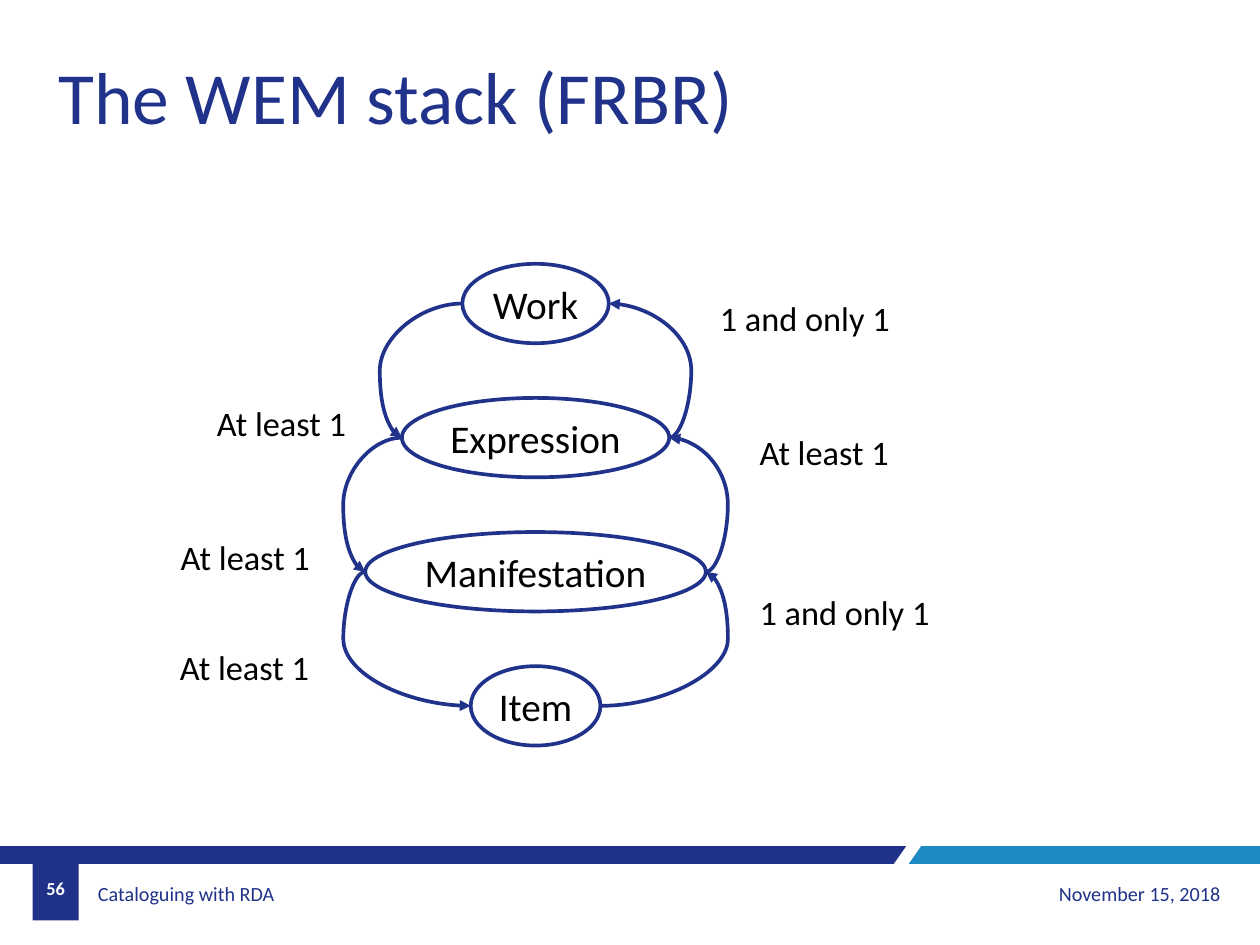
from lxml import etree
from pptx import Presentation
from pptx.dml.color import RGBColor
from pptx.enum.shapes import MSO_CONNECTOR, MSO_SHAPE
from pptx.enum.text import MSO_ANCHOR as ANCHOR, PP_ALIGN as ALIGN
from pptx.oxml.ns import qn
from pptx.util import Inches, Pt

COLORS = {"navy": "203189", "line": "21328A", "blue": "1D8BC1",
          "white": "FFFFFF", "black": "000000"}


class Deck:
    """Holds the style and the current slide."""

    font = "Calibri"
    line_width = Pt(3)

    def __init__(self, s):
        self.s = s

    def color(self, name):
        return RGBColor.from_string(COLORS[name])

    def place(self, sp, x, y, w, h):
        sp.left, sp.top, sp.width, sp.height = map(Inches, (x, y, w, h))

    def add_text(self, sp, text, size, color, align=ALIGN.LEFT, bold=False,
                 wrap=False, anchor=ANCHOR.MIDDLE):
        tf = sp.text_frame
        tf.word_wrap = wrap
        tf.vertical_anchor = anchor
        p = tf.paragraphs[0]
        p.alignment = align
        r = p.add_run()
        r.text = text
        r.font.name, r.font.size, r.font.bold = self.font, Pt(size), bold
        r.font.color.rgb = self.color(color)
        return tf

    def title(self, text, x, y, w, h):
        sp = self.s.shapes.title
        self.place(sp, x, y, w, h)
        self.add_text(sp, text, 60, "line")

    def text(self, text, x, y, w, h, size, color, **style):
        sp = self.s.shapes.add_textbox(*map(Inches, (x, y, w, h)))
        return self.add_text(sp, text, size, color, **style)

    def fill(self, sp, color):
        sp.shadow.inherit = False
        sp.fill.solid()
        sp.fill.fore_color.rgb = self.color(color)
        sp.line.fill.background()

    def outline(self, points, color):
        pts = [(Inches(x), Inches(y)) for x, y in points]
        builder = self.s.shapes.build_freeform(*pts[0])
        builder.add_line_segments(pts[1:], close=True)
        self.fill(builder.convert_to_shape(), color)

    def shape(self, kind, x, y, w, h, color):
        sp = self.s.shapes.add_shape(kind, *map(Inches, (x, y, w, h)))
        self.fill(sp, color)
        return sp

    def oval(self, text, cx, cy, w, h):
        sp = self.shape(MSO_SHAPE.OVAL, cx - w / 2, cy - h / 2, w, h, "white")
        sp.line.color.rgb = self.color("line")
        sp.line.width = self.line_width
        self.add_text(sp, text, 32, "black", align=ALIGN.CENTER)

    def curve(self, x1, y1, x2, y2, lane):
        """Draw a curved arrow that swings out to the vertical lane."""
        c = self.s.shapes.add_connector(
            MSO_CONNECTOR.CURVE, *map(Inches, (x1, y1, x2, y2)))
        c.line.color.rgb = self.color("line")
        c.line.width = self.line_width
        sppr = c._element.spPr
        guides = sppr.find(qn("a:prstGeom")).find(qn("a:avLst"))
        bend = round((lane - x1) / (x2 - x1) * 100000)
        etree.SubElement(guides, qn("a:gd"), name="adj1", fmla=f"val {bend}")
        etree.SubElement(sppr.find(qn("a:ln")), qn("a:tailEnd"), type="triangle")
        etree.SubElement(sppr, qn("a:effectLst"))


def footer(d):
    top, bottom = 9.59, 9.79
    d.outline([(10.27, top), (0, top), (0, bottom), (10.13, bottom)], "navy")
    d.outline([(14.28, top), (10.44, top), (10.3, bottom), (14.28, bottom)], "blue")
    d.shape(MSO_SHAPE.RECTANGLE, 0.37, top, 0.52, 0.84, "navy")
    tf = d.text("Cataloguing with RDA", 1.04, 9.85, 5.52, 0.55, 16.4, "navy", wrap=True)
    tf.margin_left = tf.margin_right = Inches(0.07)
    d.text("November 15, 2018", 10.27, 9.85, 3.66, 0.55, 16.4, "navy",
           align=ALIGN.RIGHT, wrap=True)
    d.text("56", 0.37, 9.79, 0.52, 0.55, 14.9, "white",
           align=ALIGN.CENTER, bold=True, wrap=True)


def stack(d):
    cx, top, step, height, swing = 6.07, 3.44, 1.52, 0.9, 0.25
    entities = [("Work", 1.66), ("Expression", 3.03),
                ("Manifestation", 3.86), ("Item", 1.47)]
    levels = [(name, top + i * step, w) for i, (name, w) in enumerate(entities)]
    for name, y, w in levels:
        d.oval(name, cx, y, w, height)
    for (_, y1, w1), (_, y2, w2) in zip(levels, levels[1:]):
        reach = max(w1, w2) / 2 + swing
        d.curve(cx - w1 / 2, y1, cx - w2 / 2, y2, cx - reach)
        d.curve(cx + w2 / 2, y2, cx + w1 / 2, y1, cx + reach)


def labels(d):
    places = {"1 and only 1": (2.15, [(8.06, 3.32), (8.51, 6.65)]),
              "At least 1": (1.68, [(8.51, 4.84), (2.36, 4.51),
                                    (1.95, 6.03), (1.94, 7.27)])}
    for text, (w, spots) in places.items():
        for x, y in spots:
            d.text(text, x, y, w, 0.57, 28, "black", anchor=ANCHOR.TOP)


def main():
    prs = Presentation()
    prs.slide_width, prs.slide_height = Inches(14.28), Inches(10.71)
    d = Deck(prs.slides.add_slide(prs.slide_layouts[5]))
    footer(d)
    d.title("The WEM stack (FRBR)", 0.56, 0.52, 7.95, 1.11)
    stack(d)
    labels(d)
    prs.save("out.pptx")


if __name__ == "__main__":
    main()
